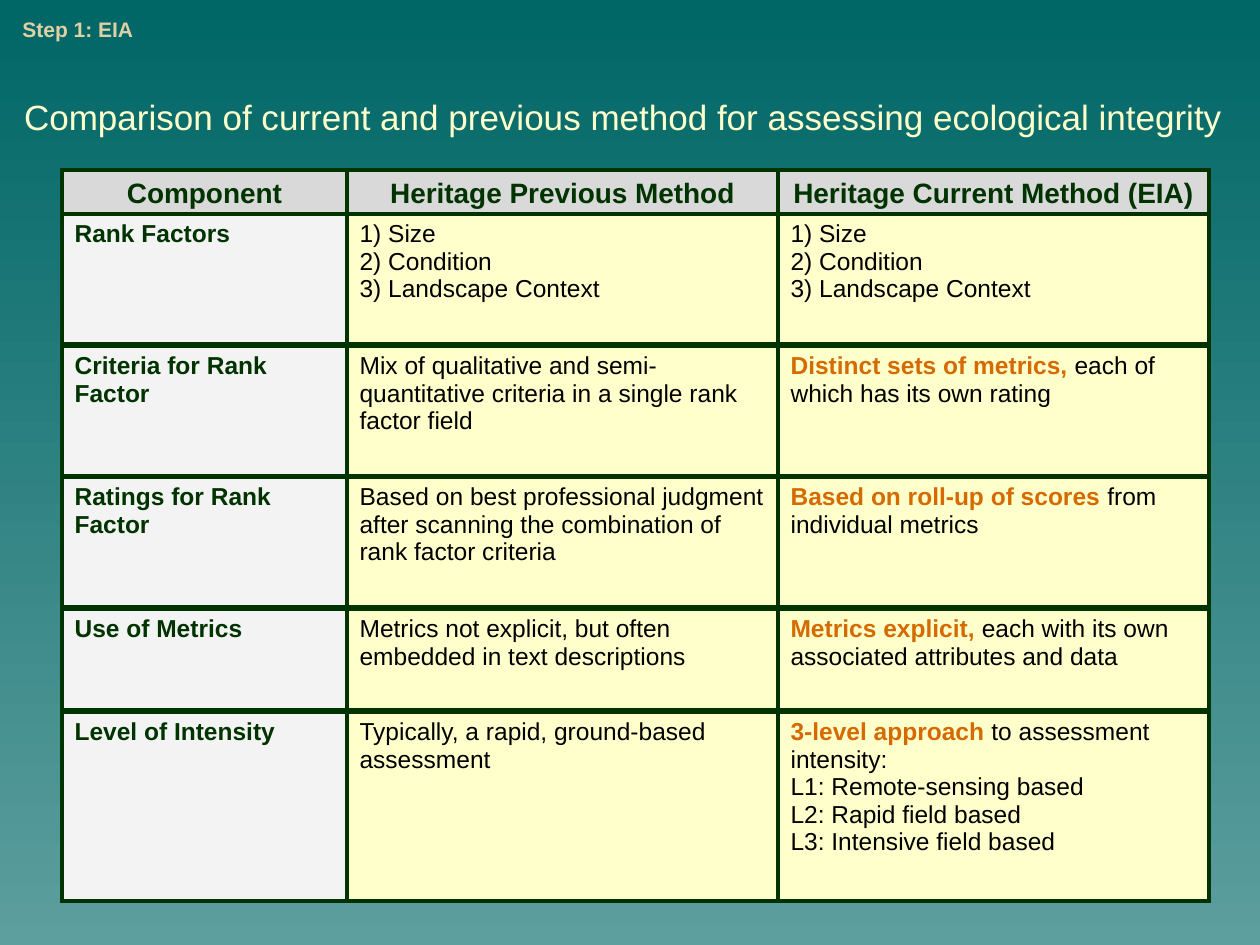
from pptx import Presentation
from pptx import util as u
from pptx.dml.color import RGBColor
from pptx.enum import text
from pptx.oxml.ns import qn
from lxml import etree

EMU_PER_PX = 914400 / 126
FONT = "Arial"
GREEN, ORANGE, BLACK = "003300", "D46A00", "000000"
CREAM, HEADER_GREY, LABEL_GREY = "FFFFCC", "D9D9D9", "F3F3F3"

TABLE_LEFT = 62
COLUMN_WIDTHS = [285, 431, 431]
HEADINGS = ["Component", "Heritage Previous Method", "Heritage Current Method (EIA)"]
RANK_FACTORS = [" Size", " Condition", " Landscape Context"]

# top, height, component, previous method, highlighted words, current method
COMPARISONS = [
    (346, 130, "Criteria for Rank Factor",
     "Mix of qualitative and semi-quantitative criteria in a single rank factor field",
     "Distinct sets of metrics, ", ["each of which has its own rating"]),
    (477, 130, "Ratings for Rank Factor",
     "Based on best professional judgment after scanning the combination of "
     "rank factor criteria",
     "Based on roll-up of scores ", ["from individual metrics"]),
    (609, 101, "Use of Metrics",
     "Metrics not explicit, but often embedded in text descriptions",
     "Metrics explicit, ", ["each with its own associated attributes and data"]),
    (712, 189, "Level of Intensity",
     "Typically, a rapid, ground-based assessment",
     "3-level approach ",
     ["to assessment intensity:", "L1: Remote-sensing based",
      "L2: Rapid field based", "L3: Intensive field based"]),
]


def px(length):
    return u.Emu(round(length * EMU_PER_PX))


def rgb(hex_colour):
    return RGBColor.from_string(hex_colour)


def add_run(paragraph, words, size, colour, bold=False):
    run = paragraph.add_run()
    run.text = words
    font = run.font
    font.name, font.size, font.bold = FONT, u.Pt(size), bold
    font.color.rgb = rgb(colour)


def place(shape, left, top, width, height):
    shape.left, shape.top = px(left), px(top)
    shape.width, shape.height = px(width), px(height)


def set_background(slide):
    fill = slide.background.fill
    fill.gradient()
    fill.gradient_angle = 270
    for stop, colour in zip(fill.gradient_stops, ["006666", "5D9E9E"]):
        stop.color.rgb = rgb(colour)


def add_title(slide):
    title = slide.shapes.title
    place(title, 0, 95, 1260, 42)
    frame = title.text_frame
    frame.margin_left, frame.margin_right = px(24), 0
    frame.margin_top = frame.margin_bottom = 0
    frame.vertical_anchor = text.MSO_ANCHOR.MIDDLE
    frame.auto_size = text.MSO_AUTO_SIZE.NONE
    paragraph = frame.paragraphs[0]
    paragraph.alignment = text.PP_ALIGN.LEFT
    add_run(paragraph,
            "Comparison of current and previous method for assessing ecological integrity",
            20, CREAM)


def add_step_label(slide):
    label = slide.shapes.add_textbox(px(10), px(10), px(158), px(38))
    label.text_frame.word_wrap = True
    add_run(label.text_frame.paragraphs[0], "Step 1: EIA", 12, "DFD0A5", True)


def add_borders(cell):
    properties = cell._tc.get_or_add_tcPr()
    for side in ("lnL", "lnR", "lnT", "lnB"):
        line = etree.SubElement(properties, qn(f"a:{side}"), w=str(u.Pt(2.25)))
        fill = etree.SubElement(line, qn("a:solidFill"))
        etree.SubElement(fill, qn("a:srgbClr"), val=GREEN)


def number_paragraph(paragraph):
    properties = paragraph._p.get_or_add_pPr()
    properties.set("marL", "0")
    properties.set("indent", "0")
    etree.SubElement(properties, qn("a:buAutoNum"), type="arabicParenR")
    tabs = etree.SubElement(properties, qn("a:tabLst"))
    etree.SubElement(tabs, qn("a:tab"), pos=str(u.Inches(0.5)), algn="l")


def add_row_table(slide, top, height, fills):
    """Add one row of the comparison as its own table and return its cells."""
    table = slide.shapes.add_table(1, len(COLUMN_WIDTHS), px(TABLE_LEFT), px(top),
                                   px(sum(COLUMN_WIDTHS)), px(height)).table
    table.first_row = table.horz_banding = False
    for column, width in zip(table.columns, COLUMN_WIDTHS):
        column.width = px(width)
    cells = list(table.rows[0].cells)
    for cell, colour in zip(cells, fills):
        add_borders(cell)
        cell.fill.solid()
        cell.fill.fore_color.rgb = rgb(colour)
    return cells


def write_lines(cell, lines, lead="", numbered=False):
    """Write one paragraph a line, with highlighted lead words before the first."""
    frame = cell.text_frame
    for index, line in enumerate(lines):
        paragraph = frame.add_paragraph() if index else frame.paragraphs[0]
        if numbered:
            number_paragraph(paragraph)
        if lead and index == 0:
            add_run(paragraph, lead, 14, ORANGE, True)
        add_run(paragraph, line, 14, BLACK)


def add_heading_row(slide):
    for cell, heading in zip(add_row_table(slide, 170, 47, [HEADER_GREY] * 3), HEADINGS):
        cell.vertical_anchor = text.MSO_ANCHOR.MIDDLE
        paragraph = cell.text_frame.paragraphs[0]
        paragraph.alignment = text.PP_ALIGN.CENTER
        add_run(paragraph, heading, 16, GREEN, True)


def add_component_row(slide, top, height, component):
    """Add a labelled row and return its two method cells."""
    label, *methods = add_row_table(slide, top, height, [LABEL_GREY, CREAM, CREAM])
    add_run(label.text_frame.paragraphs[0], component, 14, GREEN, True)
    return methods


def main():
    presentation = Presentation()
    presentation.slide_width, presentation.slide_height = px(1260), px(945)
    slide = presentation.slides.add_slide(presentation.slide_layouts[5])
    set_background(slide)
    add_title(slide)
    add_step_label(slide)
    add_heading_row(slide)
    for method in add_component_row(slide, 214, 130, "Rank Factors"):
        write_lines(method, RANK_FACTORS, numbered=True)
    for top, height, component, before, lead, now in COMPARISONS:
        previous, current = add_component_row(slide, top, height, component)
        write_lines(previous, [before])
        write_lines(current, now, lead)
    presentation.save("out.pptx")


if __name__ == "__main__":
    main()
